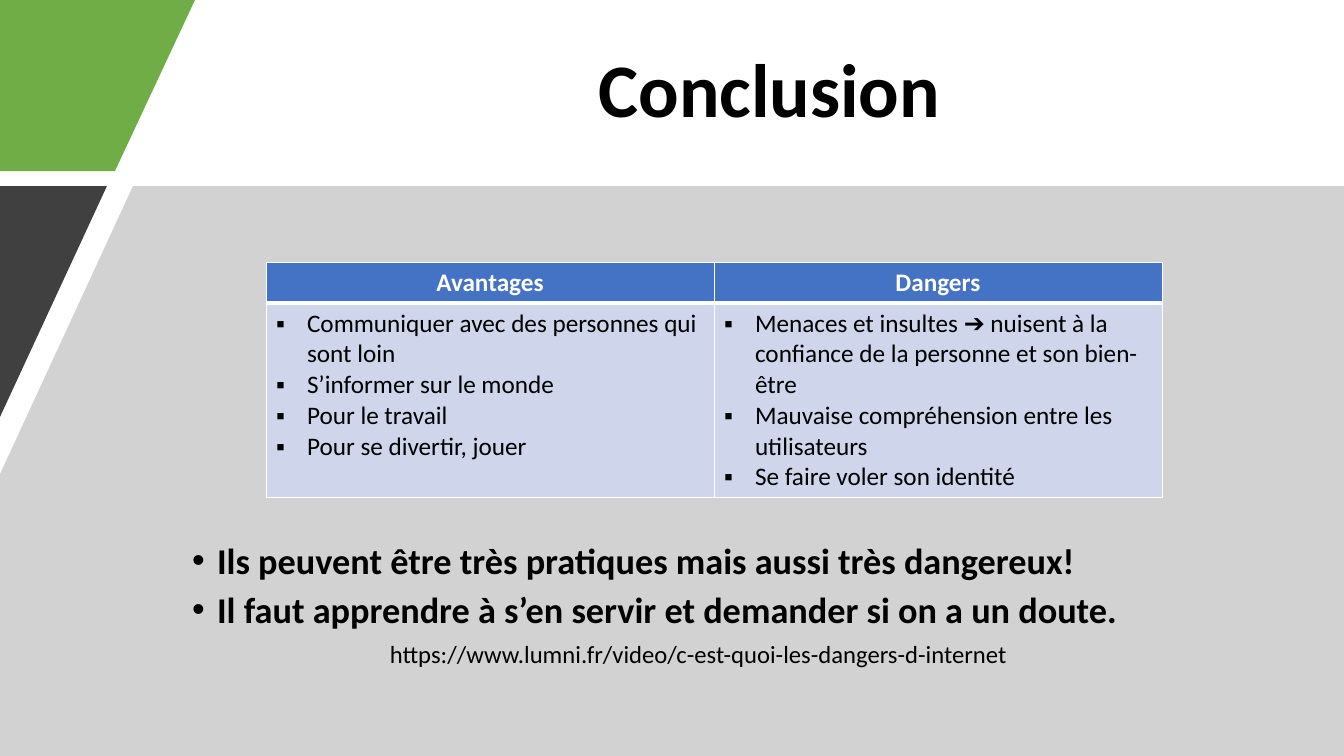
from lxml import etree
from pptx import Presentation
from pptx.dml.color import RGBColor
from pptx.enum.text import MSO_ANCHOR, MSO_AUTO_SIZE, PP_ALIGN
from pptx.oxml.ns import qn
from pptx.util import Pt

CENTER, LEFT = PP_ALIGN.CENTER, PP_ALIGN.LEFT
MIDDLE, TOP = MSO_ANCHOR.MIDDLE, MSO_ANCHOR.TOP
NO_FIT = MSO_AUTO_SIZE.NONE
PX = 12192000 / 1344
FONT = "Calibri"


def color(value):
    return RGBColor.from_string(value)


def write(para, text, size, ink="000000", bold=False, align=LEFT, bullet=None, indent=0):
    """Add one run to a paragraph, with an optional hanging bullet."""
    para.alignment = align
    props = para._p.get_or_add_pPr()
    props.set("marL", str(round(indent * PX)))
    props.set("indent", str(round(-indent * PX)))
    if bullet:
        etree.SubElement(props, qn("a:buFont"), typeface="Arial")
        etree.SubElement(props, qn("a:buChar"), char=bullet)
    else:
        etree.SubElement(props, qn("a:buNone"))
    span = para.add_run()
    span.text = text
    span.font.name, span.font.size, span.font.bold = FONT, Pt(size), bold
    span.font.color.rgb = color(ink)


deck = Presentation()
deck.slide_width, deck.slide_height = round(1344 * PX), round(756 * PX)
page = deck.slides.add_slide(deck.slide_layouts[1])
title, body = page.placeholders

# Green corner, grey panel and dark triangle: points in px, fill, opacity in percent
panels = [
    ([(0, 0), (195, 0), (115, 171), (0, 171)], "70AD47", 100),
    ([(133, 186), (1344, 186), (1344, 756), (0, 756), (0, 474)], "A6A6A6", 50),
    ([(0, 186), (107, 186), (0, 417)], "404040", 100),
]
for points, fill, opacity in panels:
    outline = page.shapes.build_freeform(*points[0], scale=PX)
    outline.add_line_segments(points[1:], close=True)
    panel = outline.convert_to_shape()
    panel.shadow.inherit = False
    panel.line.fill.background()
    panel.fill.solid()
    panel.fill.fore_color.rgb = color(fill)
    if opacity < 100:
        tint = panel._element.spPr.find(".//" + qn("a:srgbClr"))
        etree.SubElement(tint, qn("a:alpha"), val=str(opacity * 1000))

# Title and closing list, placed in front of the panels
places = [(title, (195, 0, 1149, 186), MIDDLE), (body, (182, 542, 1033, 144), TOP)]
for box, place, anchor in places:
    box.left, box.top, box.width, box.height = [round(length * PX) for length in place]
    box.text_frame.word_wrap = True
    box.text_frame.auto_size = NO_FIT
    box.text_frame.vertical_anchor = anchor
    box._element.getparent().append(box._element)

heading = title.text_frame.paragraphs[0]
heading.line_spacing = 0.9
write(heading, "Conclusion", 54, bold=True, align=CENTER)

closing = [
    ("Ils peuvent être très pratiques mais aussi très dangereux!", 25.9, True, LEFT, "•", 25),
    ("Il faut apprendre à s’en servir et demander si on a un doute.", 25.9, True, LEFT, "•", 25),
    ("https://www.lumni.fr/video/c-est-quoi-les-dangers-d-internet", 17.6, False, CENTER, None, 0),
]
for index, (text, size, bold, align, bullet, indent) in enumerate(closing):
    para = body.text_frame.add_paragraph() if index else body.text_frame.paragraphs[0]
    para.line_spacing = 0.8
    para.space_before = Pt(10 if index else 0)
    write(para, text, size, bold=bold, align=align, bullet=bullet, indent=indent)

# Table of advantages and dangers
columns = [
    ("Avantages", [
        "Communiquer avec des personnes qui sont loin",
        "S’informer sur le monde",
        "Pour le travail",
        "Pour se divertir, jouer",
    ]),
    ("Dangers", [
        "Menaces et insultes ➔ nuisent à la confiance de la personne et son bien-être",
        "Mauvaise compréhension entre les utilisateurs",
        "Se faire voler son identité",
    ]),
]
frame = page.shapes.add_table(2, 2, *[round(length * PX) for length in (266, 262, 896, 233)])
table = frame.table
table.horz_banding = False
for row, height in zip(table.rows, (41, 192)):
    row.height = round(height * PX)

for column, (header, points) in enumerate(columns):
    table.columns[column].width = round(448 * PX)
    header_cell, list_cell = table.cell(0, column), table.cell(1, column)
    write(header_cell.text_frame.paragraphs[0], header, 18, "FFFFFF", True, CENTER)
    for index, point in enumerate(points):
        text_frame = list_cell.text_frame
        para = text_frame.add_paragraph() if index else text_frame.paragraphs[0]
        write(para, point, 18, bullet="▪", indent=31)

    # White borders, thicker between header and list
    for cell, fill, thick in ((header_cell, "4472C4", "lnB"), (list_cell, "CFD5EA", "lnT")):
        props = cell._tc.get_or_add_tcPr()
        for side in ("lnL", "lnR", "lnT", "lnB"):
            width = Pt(3 if side == thick else 0.5)
            line = etree.SubElement(props, qn("a:" + side), w=str(width))
            solid = etree.SubElement(line, qn("a:solidFill"))
            etree.SubElement(solid, qn("a:srgbClr"), val="FFFFFF")
        cell.fill.solid()
        cell.fill.fore_color.rgb = color(fill)

deck.save("out.pptx")
